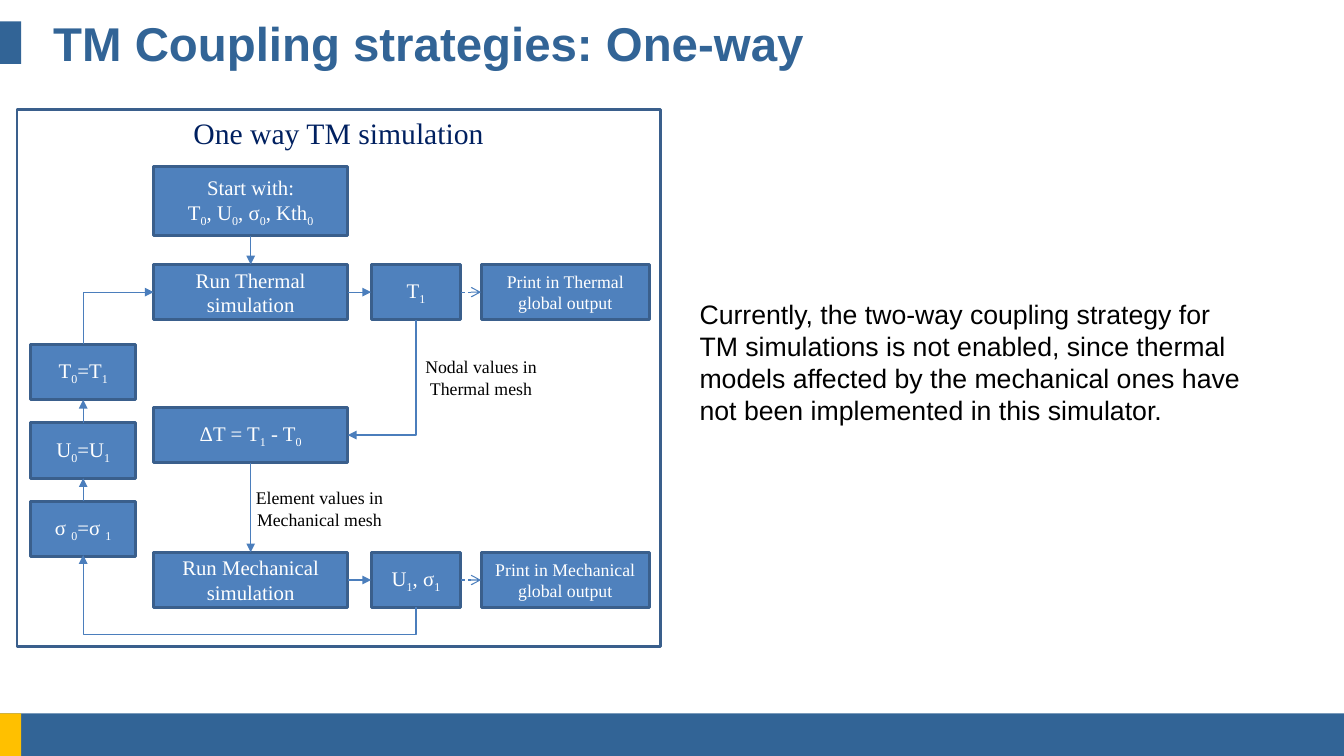
from lxml import etree
from pptx import Presentation
from pptx.dml.color import RGBColor
from pptx.enum.dml import MSO_LINE
from pptx.enum.shapes import MSO_CONNECTOR, MSO_SHAPE
from pptx.enum.text import MSO_ANCHOR, PP_ALIGN
from pptx.oxml.ns import qn
from pptx.util import Inches, Pt

RECTANGLE = MSO_SHAPE.RECTANGLE
STRAIGHT, ELBOW = MSO_CONNECTOR.STRAIGHT, MSO_CONNECTOR.ELBOW
LEFT, CENTER = PP_ALIGN.LEFT, PP_ALIGN.CENTER
TOP, MIDDLE = MSO_ANCHOR.TOP, MSO_ANCHOR.MIDDLE
DASH = MSO_LINE.DASH

BRAND_BLUE = RGBColor(0x32, 0x64, 0x96)
AMBER = RGBColor(0xFF, 0xC0, 0x00)
BOX_BLUE = RGBColor(0x4F, 0x81, 0xBD)
BORDER_BLUE = RGBColor(0x3A, 0x5F, 0x8C)
ARROW_BLUE = RGBColor(0x4B, 0x7E, 0xBC)
NAVY = RGBColor(0x00, 0x20, 0x60)
WHITE = RGBColor(0xFF, 0xFF, 0xFF)
BLACK = RGBColor(0x00, 0x00, 0x00)
SANS, SERIF = "Arial", "Times New Roman"
TOP_SIDE, LEFT_SIDE, BOTTOM_SIDE, RIGHT_SIDE = range(4)


def write(shape, text, size=14, font=SERIF, color=WHITE, align=CENTER,
          anchor=MIDDLE, bold=False):
    """Fill a shape with text; the character after each "_" is a subscript."""
    frame = shape.text_frame
    frame.word_wrap = True
    frame.vertical_anchor = anchor
    for number, line in enumerate(text.split("\n")):
        paragraph = frame.add_paragraph() if number else frame.paragraphs[0]
        paragraph.alignment = align
        first, *rest = line.split("_")
        pieces = [(first, False)]
        for part in rest:
            pieces += [(part[0], True), (part[1:], False)]
        for piece, is_subscript in pieces:
            if not piece:
                continue
            run = paragraph.add_run()
            run.text = piece
            run.font.size = Pt(size)
            run.font.name = font
            run.font.bold = bold
            run.font.color.rgb = color
            if is_subscript:
                run.font._element.set("baseline", "-25000")


def style_arrow(arrow, head="triangle", dash=None):
    arrow.line.color.rgb = ARROW_BLUE
    arrow.line.width = Pt(0.75)
    if dash:
        arrow.line.dash_style = dash
    properties = arrow._element.spPr
    etree.SubElement(properties.find(qn("a:ln")), qn("a:tailEnd"), type=head)
    etree.SubElement(properties, qn("a:effectLst"))


prs = Presentation()
prs.slide_width, prs.slide_height = Inches(12.6), Inches(7.09)
slide = prs.slides.add_slide(prs.slide_layouts[6])
shapes = slide.shapes

# Page bars and title
for left, top, width, color in [
    (0, 6.69, 12.6, BRAND_BLUE),
    (0, 6.69, 0.2, AMBER),
    (0, 0.2, 0.2, BRAND_BLUE),
]:
    bar = shapes.add_shape(RECTANGLE, Inches(left), Inches(top), Inches(width), Inches(0.4))
    bar.shadow.inherit = False
    bar.fill.solid()
    bar.fill.fore_color.rgb = color
    bar.line.fill.background()

# Flowchart boxes, placed by column and row
MAIN, RESULT, OUTPUT, UPDATE = (1.44, 1.82), (3.48, 0.84), (4.51, 1.58), (0.29, 0.98)
THERMAL_TOP, MECHANICAL_TOP, BOX_HEIGHT = 2.48, 5.18, 0.52
UPDATE_TOP, UPDATE_PITCH = 3.23, 0.735

boxes = {}
for name, text, (left, width), top, height, size in [
    ("start", "Start with:\nT_0, U_0, σ_0, Kth_0", MAIN, 1.56, 0.65, 14),
    ("thermal", "Run Thermal simulation", MAIN, THERMAL_TOP, BOX_HEIGHT, 14),
    ("delta", "ΔT = T_1 - T_0", MAIN, 3.82, BOX_HEIGHT, 14),
    ("mechanical", "Run Mechanical simulation", MAIN, MECHANICAL_TOP, BOX_HEIGHT, 14),
    ("T1", "T_1", RESULT, THERMAL_TOP, BOX_HEIGHT, 14),
    ("U1", "U_1, σ_1", RESULT, MECHANICAL_TOP, BOX_HEIGHT, 14),
    ("thermal output", "Print in Thermal global output", OUTPUT, THERMAL_TOP, BOX_HEIGHT, 12),
    ("mechanical output", "Print in Mechanical global output", OUTPUT, MECHANICAL_TOP,
     BOX_HEIGHT, 12),
    ("update T", "T_0=T_1", UPDATE, UPDATE_TOP, BOX_HEIGHT, 14),
    ("update U", "U_0=U_1", UPDATE, UPDATE_TOP + UPDATE_PITCH, BOX_HEIGHT, 14),
    ("update σ", "σ _0=σ _1", UPDATE, UPDATE_TOP + 2 * UPDATE_PITCH, BOX_HEIGHT, 14),
    ("frame", "One way TM simulation", (0.16, 6.03), 1.03, 5.03, 20),
]:
    box = shapes.add_shape(RECTANGLE, Inches(left), Inches(top), Inches(width), Inches(height))
    box.shadow.inherit = False
    box.line.color.rgb = BORDER_BLUE
    box.line.width = Pt(2)
    if name == "frame":
        box.fill.background()
        write(box, text, size, color=NAVY, anchor=TOP)
    else:
        box.fill.solid()
        box.fill.fore_color.rgb = BOX_BLUE
        write(box, text, size)
    boxes[name] = box

# Straight arrows between neighbouring boxes
for source, source_side, target, target_side, head, dash in [
    ("start", BOTTOM_SIDE, "thermal", TOP_SIDE, "triangle", None),
    ("delta", BOTTOM_SIDE, "mechanical", TOP_SIDE, "triangle", None),
    ("thermal", RIGHT_SIDE, "T1", LEFT_SIDE, "triangle", None),
    ("mechanical", RIGHT_SIDE, "U1", LEFT_SIDE, "triangle", None),
    ("T1", RIGHT_SIDE, "thermal output", LEFT_SIDE, "arrow", DASH),
    ("U1", RIGHT_SIDE, "mechanical output", LEFT_SIDE, "arrow", DASH),
    ("update σ", TOP_SIDE, "update U", BOTTOM_SIDE, "triangle", None),
    ("update U", TOP_SIDE, "update T", BOTTOM_SIDE, "triangle", None),
]:
    arrow = shapes.add_connector(STRAIGHT, 0, 0, 0, 0)
    arrow.begin_connect(boxes[source], source_side)
    arrow.end_connect(boxes[target], target_side)
    style_arrow(arrow, head, dash)

# Bent arrows, each turned by 90 degrees: centre, size before turning, flips, preset, bend
for center_x, center_y, width, height, flips, preset, bend in [
    (3.58, 3.54, 1.08, 0.64, [], "bentConnector2", None),
    (2.34, 5.45, 0.49, 3.12, ["flipH"], "bentConnector3", -51500),
    (1.11, 2.985, 0.49, 0.66, ["flipH", "flipV"], "bentConnector2", None),
]:
    left, top = center_x - width / 2, center_y - height / 2
    arrow = shapes.add_connector(ELBOW, Inches(left), Inches(top),
                                 Inches(left + width), Inches(top + height))
    transform = arrow._element.spPr.find(qn("a:xfrm"))
    transform.set("rot", str(90 * 60000))
    for flip in flips:
        transform.set(flip, "1")
    geometry = arrow._element.spPr.find(qn("a:prstGeom"))
    geometry.set("prst", preset)
    if bend is not None:
        etree.SubElement(geometry.find(qn("a:avLst")), qn("a:gd"),
                         name="adj1", fmla=f"val {bend}")
    style_arrow(arrow)

# Title, arrow labels and commentary
label = dict(size=12, color=BLACK, anchor=TOP)
for text, left, top, width, height, style in [
    ("TM Coupling strategies: One-way", 0.4, 0.2, 11.81, 0.4,
     dict(size=32, font=SANS, color=BRAND_BLUE, align=LEFT, bold=True)),
    ("Nodal values in Thermal mesh", 3.85, 3.29, 1.32, 0.5, label),
    ("Element values in Mechanical mesh", 2.29, 4.52, 1.41, 0.5, label),
    ("Currently, the two-way coupling strategy for TM simulations is not enabled, since "
     "thermal models affected by the mechanical ones have not been implemented in this "
     "simulator.", 6.46, 2.74, 5.35, 1.31,
     dict(size=18, font=SANS, color=BLACK, align=LEFT, anchor=TOP)),
]:
    caption = shapes.add_textbox(Inches(left), Inches(top), Inches(width), Inches(height))
    write(caption, text, **style)

prs.save("out.pptx")
